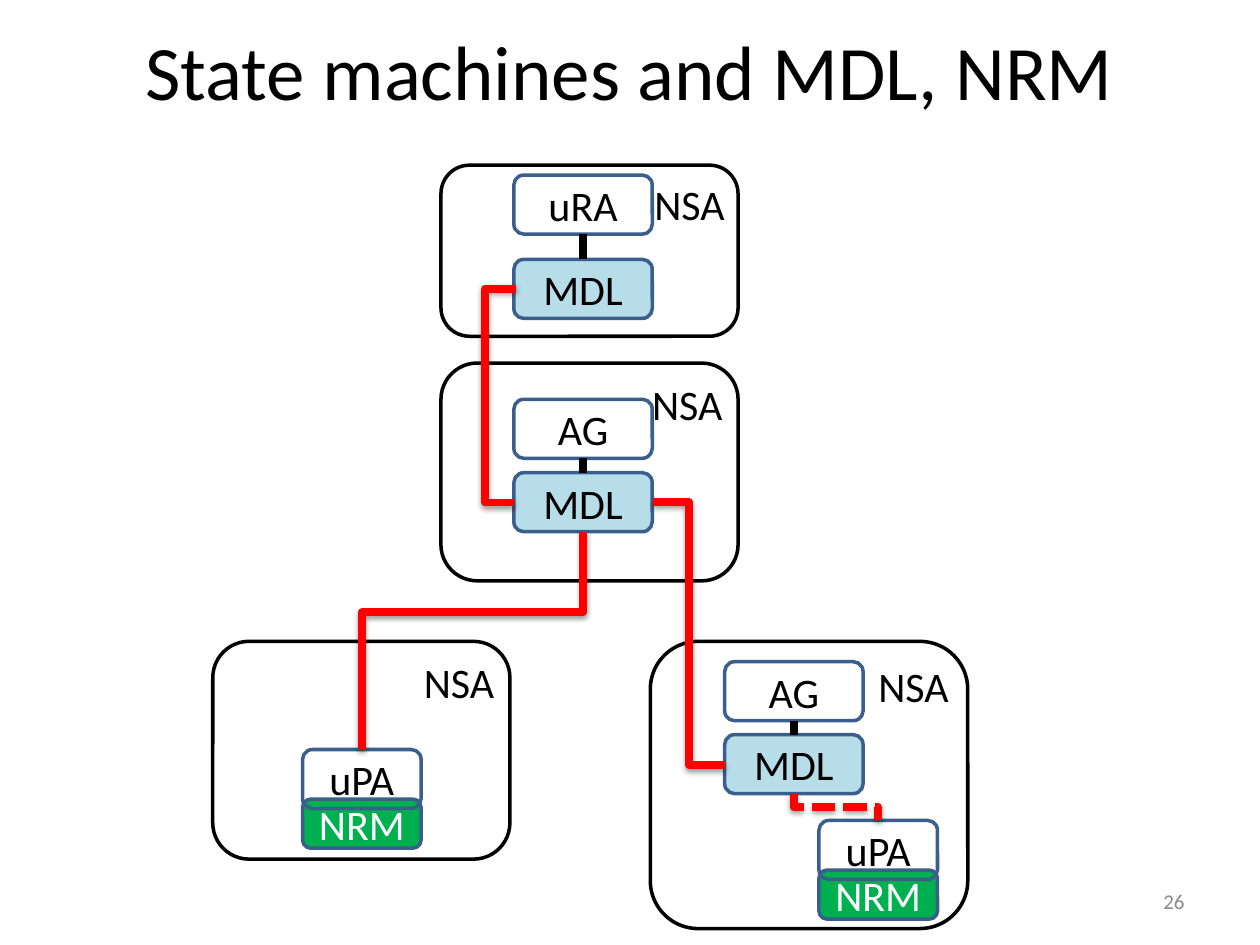
"""Build a slide of nested service agents linked by their state machines."""
from lxml import etree
from pptx import Presentation
from pptx.dml.color import RGBColor
from pptx.enum.dml import MSO_LINE
from pptx.enum.shapes import MSO_CONNECTOR, MSO_SHAPE
from pptx.enum.text import MSO_ANCHOR, PP_ALIGN
from pptx.oxml import parse_xml
from pptx.oxml.ns import nsdecls, qn
from pptx.util import Cm, Pt

ROUNDED = MSO_SHAPE.ROUNDED_RECTANGLE
STRAIGHT, ELBOW = MSO_CONNECTOR.STRAIGHT, MSO_CONNECTOR.ELBOW
DASHED = MSO_LINE.SQUARE_DOT
TOP, MIDDLE = MSO_ANCHOR.TOP, MSO_ANCHOR.MIDDLE
CENTER, RIGHT = PP_ALIGN.CENTER, PP_ALIGN.RIGHT

BLACK = RGBColor(0x00, 0x00, 0x00)
WHITE = RGBColor(0xFF, 0xFF, 0xFF)
GRAY = RGBColor(0x89, 0x89, 0x89)
BLUE = RGBColor(0x3A, 0x5F, 0x8C)
PALE_BLUE = RGBColor(0xB7, 0xDE, 0xE8)
GREEN = RGBColor(0x00, 0xB0, 0x50)
RED = RGBColor(0xFF, 0x00, 0x00)

FONT = "Calibri"
AGENT_WIDTH, PROVIDER_WIDTH, BOX_HEIGHT = 2.79, 2.39, 1.19
SHADOW = (
    f'<a:effectLst {nsdecls("a")}><a:outerShdw blurRad="40000" dist="20000" '
    'dir="5400000" rotWithShape="0"><a:srgbClr val="000000">'
    '<a:alpha val="38000"/></a:srgbClr></a:outerShdw></a:effectLst>'
)


def write_text(shape, text, size=24, color=BLACK, align=CENTER, anchor=MIDDLE, inset=0.1):
    frame = shape.text_frame
    frame.word_wrap = True
    frame.vertical_anchor = anchor
    frame.margin_left = frame.margin_right = Cm(inset)
    frame.margin_top = frame.margin_bottom = Cm(inset)
    paragraph = frame.paragraphs[0]
    paragraph.alignment = align
    run = paragraph.add_run()
    run.text = text
    run.font.name = FONT
    run.font.size = Pt(size)
    run.font.color.rgb = color


class Diagram:
    def __init__(self, slide):
        self.slide = slide

    def label(self, text, left, top, width, height, **text_format):
        shape = self.slide.shapes.add_textbox(Cm(left), Cm(top), Cm(width), Cm(height))
        write_text(shape, text, **text_format)

    def box(self, text, left, top, width, height=BOX_HEIGHT, fill=None, line=BLUE, **text_format):
        shape = self.slide.shapes.add_shape(ROUNDED, Cm(left), Cm(top), Cm(width), Cm(height))
        shape.shadow.inherit = False
        if fill is None:
            shape.fill.background()
        else:
            shape.fill.solid()
            shape.fill.fore_color.rgb = fill
        shape.line.color.rgb = line
        shape.line.width = Pt(2)
        write_text(shape, text, **text_format)

    def domain(self, left, top, width, height):
        self.box("NSA", left, top, width, height, line=BLACK, align=RIGHT, anchor=TOP)

    def agent(self, name, left, top, machine_top):
        center = left + AGENT_WIDTH / 2
        self.box(name, left, top, AGENT_WIDTH)
        self.box("MDL", left, machine_top, AGENT_WIDTH, fill=PALE_BLUE)
        link = self.connector(STRAIGHT, (center, top + BOX_HEIGHT), (center, machine_top), BLACK)
        etree.SubElement(link._element.spPr, qn("a:effectLst"))

    def provider(self, left, top):
        self.box("NRM", left, top + 1, PROVIDER_WIDTH, 0.99, fill=GREEN, color=WHITE)
        self.box("uPA", left, top, PROVIDER_WIDTH)

    def connector(self, kind, start, end, color):
        points = [Cm(value) for value in (*start, *end)]
        connector = self.slide.shapes.add_connector(kind, *points)
        connector.line.color.rgb = color
        connector.line.width = Pt(4.5)
        return connector

    def elbow(self, start, end, turn, vertical=False, dash=None):
        (x1, y1), (x2, y2) = start, end
        ratio = (turn - y1) / (y2 - y1) if vertical else (turn - x1) / (x2 - x1)
        if vertical:
            x, y = (x1 + x2) / 2, (y1 + y2) / 2
            start, end = (x + y1 - y, y - x1 + x), (x + y2 - y, y - x2 + x)
        connector = self.connector(ELBOW, start, end, RED)
        if dash is not None:
            connector.line.dash_style = dash
        properties = connector._element.spPr
        if vertical:
            properties.find(qn("a:xfrm")).set("rot", "5400000")
        guides = properties.find(qn("a:prstGeom")).find(qn("a:avLst"))
        guide = etree.SubElement(guides, qn("a:gd"))
        guide.set("name", "adj1")
        guide.set("fmla", f"val {round(ratio * 100000)}")
        properties.append(parse_xml(SHADOW))


def main():
    presentation = Presentation()
    presentation.slide_width, presentation.slide_height = Cm(25.4), Cm(19.05)
    diagram = Diagram(presentation.slides.add_slide(presentation.slide_layouts[6]))

    for domain in (
        (8.89, 3.33, 5.99, 3.45),
        (8.89, 7.32, 5.99, 4.39),
        (4.29, 12.93, 5.99, 4.39),
        (13.11, 12.93, 6.4, 5.79),
    ):
        diagram.domain(*domain)
    for left, top in ((16.51, 16.54), (6.1, 15.11)):
        diagram.provider(left, top)
    for agent in (
        ("uRA", 10.36, 3.53, 5.23),
        ("AG", 10.36, 8.05, 9.53),
        ("AG", 14.61, 13.34, 14.81),
    ):
        diagram.agent(*agent)

    diagram.label("State machines and MDL, NRM", 1.27, 0.46, 22.86, 1.9, size=44, inset=0)
    diagram.label("26", 18.21, 17.65, 5.92, 1.02, size=12, color=GRAY, align=RIGHT, inset=0.25)

    diagram.elbow((10.4, 5.82), (10.36, 10.13), 9.78)
    diagram.elbow((11.76, 10.72), (7.3, 15.11), 12.34, vertical=True)
    diagram.elbow((14.61, 15.42), (13.17, 10.13), 13.89)
    diagram.elbow((16, 16), (17.7, 16.54), 16.27, vertical=True, dash=DASHED)

    presentation.save("out.pptx")


if __name__ == "__main__":
    main()
